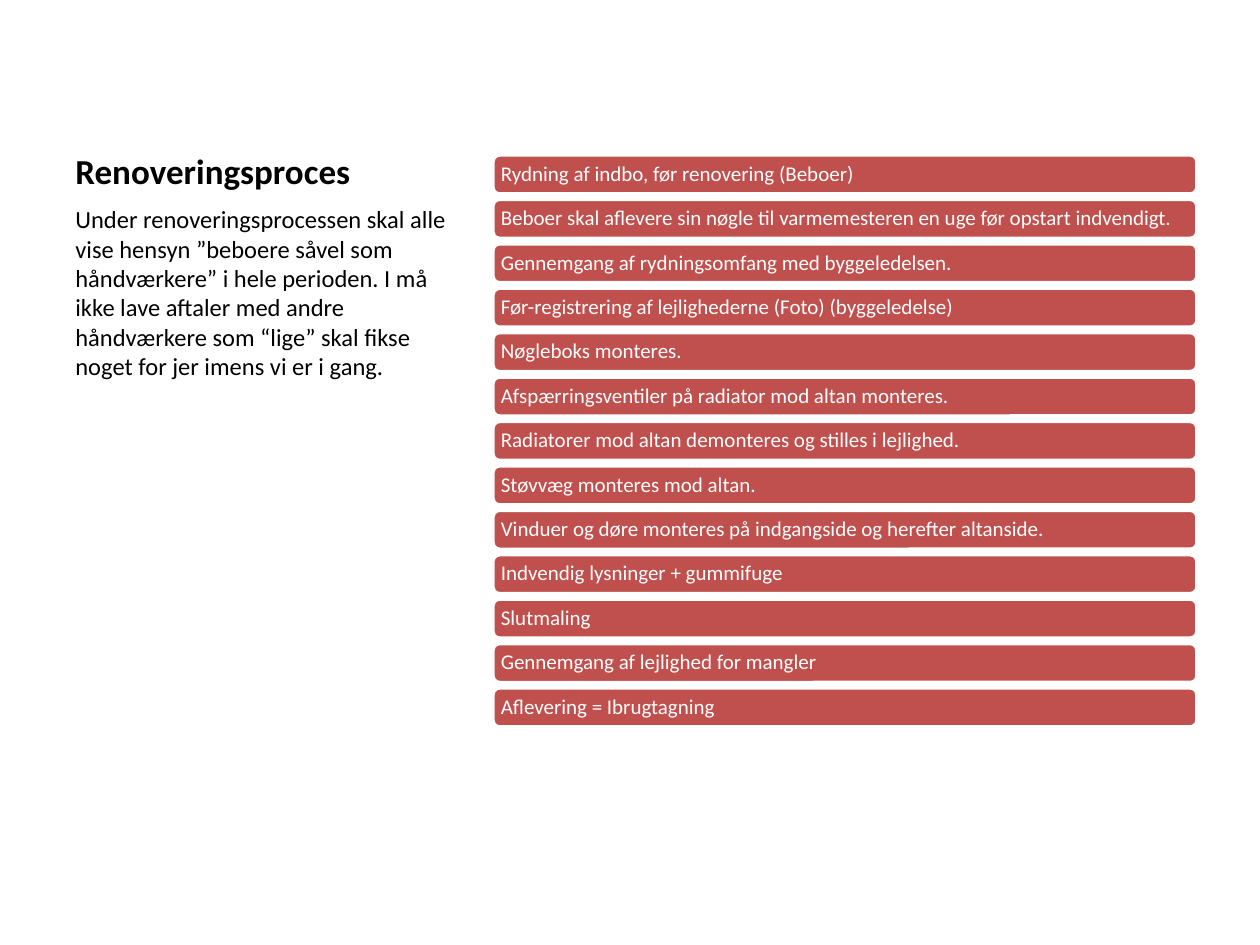
from pptx import Presentation
from pptx.dml.color import RGBColor
from pptx.enum.shapes import MSO_SHAPE
from pptx.enum.text import MSO_ANCHOR, PP_ALIGN
from pptx.util import Pt

HEADING = "Renoveringsproces"
INTRO = (
    "Under renoveringsprocessen skal alle vise hensyn ”beboere såvel som håndværkere” "
    "i hele perioden. I må ikke lave aftaler med andre håndværkere som “lige” skal fikse "
    "noget for jer imens vi er i gang."
)
STEPS = [
    "Rydning af indbo, før renovering (Beboer)",
    "Beboer skal aflevere sin nøgle til varmemesteren en uge før opstart indvendigt.",
    "Gennemgang af rydningsomfang med byggeledelsen.",
    "Før-registrering af lejlighederne (Foto) (byggeledelse)",
    "Nøgleboks monteres.",
    "Afspærringsventiler på radiator mod altan monteres.",
    "Radiatorer mod altan demonteres og stilles i lejlighed.",
    "Støvvæg monteres mod altan.",
    "Vinduer og døre monteres på indgangside og herefter altanside.",
    "Indvendig lysninger + gummifuge",
    "Slutmaling",
    "Gennemgang af lejlighed for mangler",
    "Aflevering = Ibrugtagning",
]
COLORS = {"text": "000000", "bar": "C0504D", "white": "FFFFFF"}
FONT = "Calibri"

SLIDE_WIDTH, SLIDE_HEIGHT = 1260, 945
HEADING_BOX = (63, 38, 415, 160)
INTRO_BOX = (63, 198, 415, 646)
BAR_LEFT, BAR_WIDTH, BAR_HEIGHT = 493, 704, 39
FIRST_TOP, LAST_TOP = 155, 688
BAR_INSET = 6


def px(length):
    return round(length * 914400 / 126)


def color(name):
    return RGBColor.from_string(COLORS[name])


def write(frame, text, size, color_name, anchor, bold=False):
    frame.word_wrap = True
    frame.vertical_anchor = anchor
    frame.text = text
    paragraph = frame.paragraphs[0]
    paragraph.alignment = PP_ALIGN.LEFT
    font = paragraph.runs[0].font
    font.name, font.size, font.bold = FONT, Pt(size), bold
    font.color.rgb = color(color_name)


def add_text(slide, box, *style, **options):
    text_box = slide.shapes.add_textbox(*map(px, box))
    write(text_box.text_frame, *style, **options)


def add_step(slide, top, step):
    box = (BAR_LEFT, top, BAR_WIDTH, BAR_HEIGHT)
    bar = slide.shapes.add_shape(MSO_SHAPE.ROUNDED_RECTANGLE, *map(px, box))
    bar.shadow.inherit = False
    bar.fill.solid()
    bar.fill.fore_color.rgb = color("bar")
    bar.line.color.rgb = color("white")
    bar.line.width = Pt(2)
    frame = bar.text_frame
    frame.margin_left = frame.margin_right = px(BAR_INSET)
    frame.margin_top = frame.margin_bottom = px(BAR_INSET)
    write(frame, step, 12, "white", MSO_ANCHOR.MIDDLE)
    frame.paragraphs[0].line_spacing = 0.9


def main():
    presentation = Presentation()
    presentation.slide_width = px(SLIDE_WIDTH)
    presentation.slide_height = px(SLIDE_HEIGHT)
    slide = presentation.slides.add_slide(presentation.slide_layouts[6])

    add_text(slide, HEADING_BOX, HEADING, 20, "text", MSO_ANCHOR.BOTTOM, bold=True)
    add_text(slide, INTRO_BOX, INTRO, 14, "text", MSO_ANCHOR.TOP)

    pitch = (LAST_TOP - FIRST_TOP) / (len(STEPS) - 1)
    for index, step in enumerate(STEPS):
        add_step(slide, FIRST_TOP + index * pitch, step)

    presentation.save("out.pptx")


if __name__ == "__main__":
    main()
